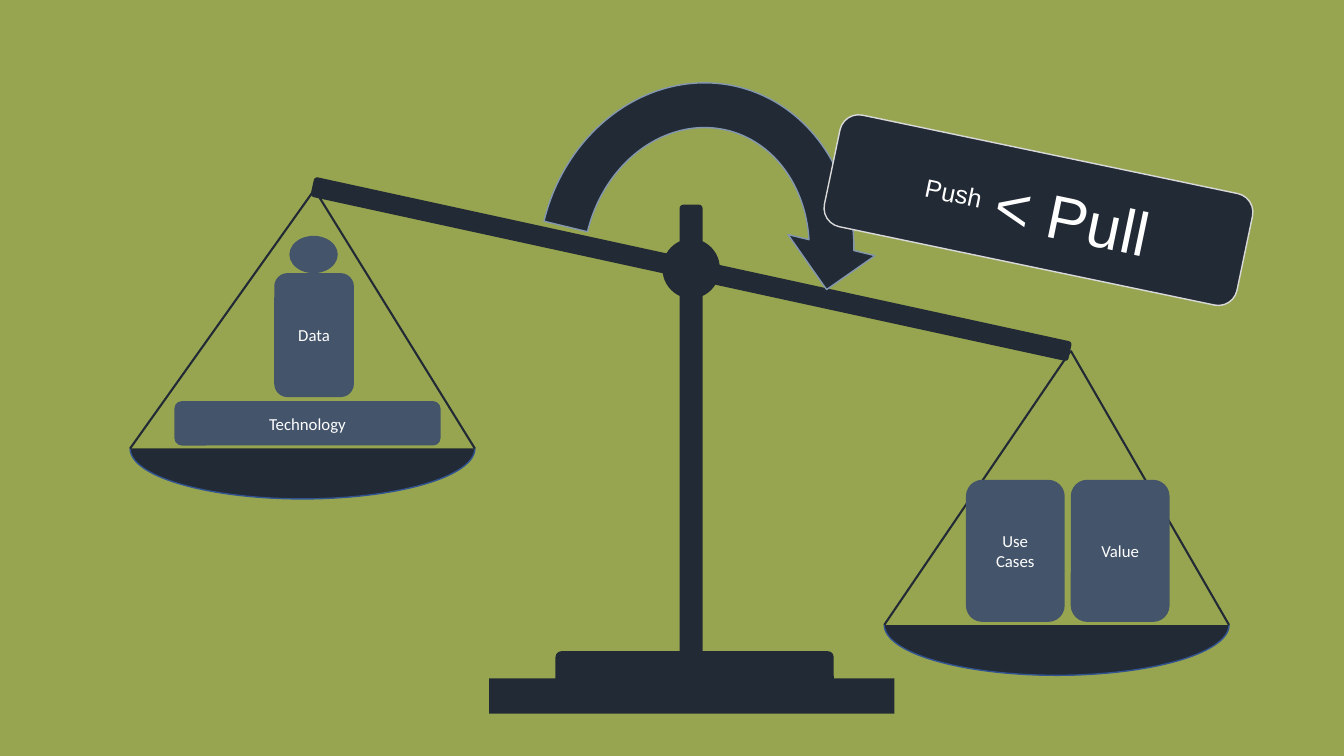
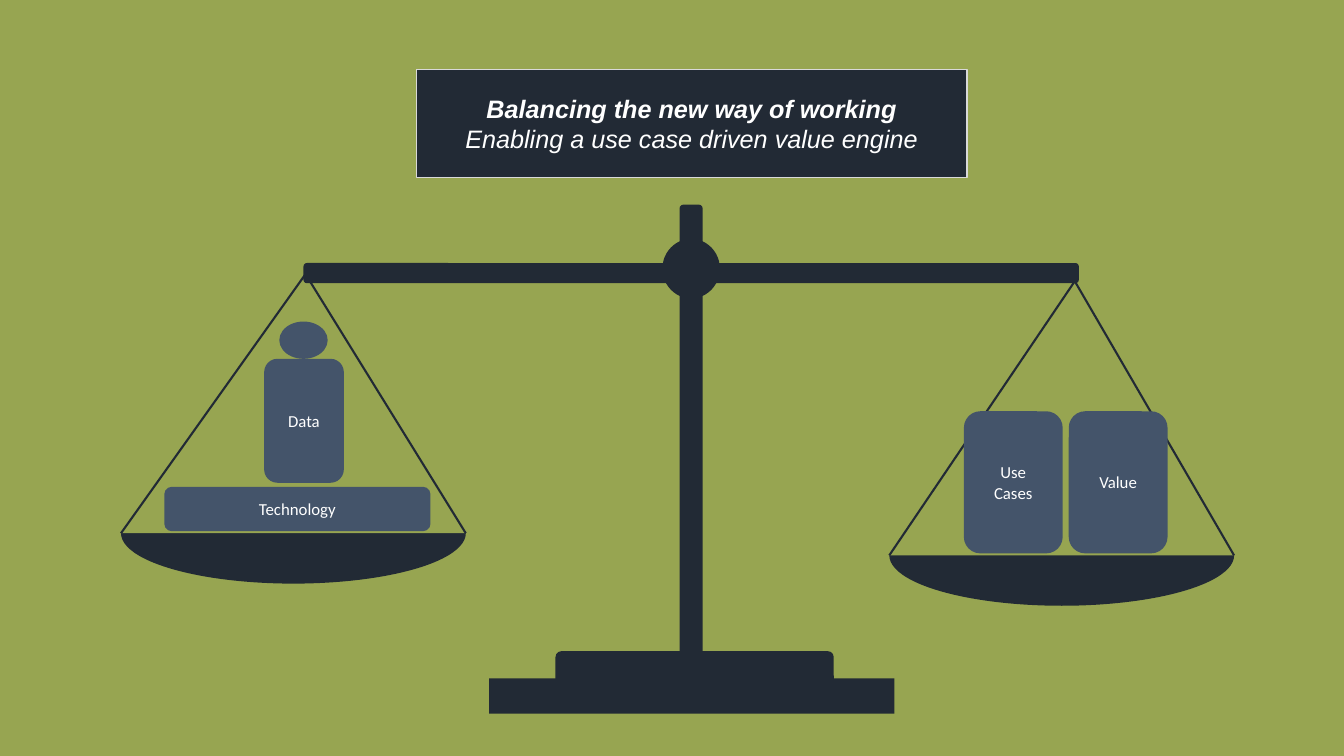
from lxml import etree
from pptx import Presentation
from pptx.dml.color import RGBColor
from pptx.enum.shapes import MSO_CONNECTOR, MSO_SHAPE
from pptx.enum.text import MSO_ANCHOR, MSO_AUTO_SIZE, PP_ALIGN
from pptx.oxml.ns import qn
from pptx.util import Inches, Pt

RECTANGLE = MSO_SHAPE.RECTANGLE
ROUNDED = MSO_SHAPE.ROUNDED_RECTANGLE
OVAL = MSO_SHAPE.OVAL
CURVED_ARROW = MSO_SHAPE.CIRCULAR_ARROW
STRAIGHT = MSO_CONNECTOR.STRAIGHT
CENTER = PP_ALIGN.CENTER
MIDDLE = MSO_ANCHOR.MIDDLE
TOP = MSO_ANCHOR.TOP
NO_AUTOFIT = MSO_AUTO_SIZE.NONE

COLORS = {
    "background": "97A551",
    "scale": "222A35",
    "weight": "44546A",
    "pan_edge": "325491",
    "arrow_edge": "8497B0",
    "panel_edge": "D9D9D9",
    "text": "FFFFFF",
}
TITLE_ONLY, BLANK = 5, 6
PAN_WIDTH, PAN_HEIGHT = 3.42, 1
MASK_OVERHANG, MASK_WIDTH, MASK_HEIGHT = 0.42, 4.65, 0.66
BLOCK_WIDTH, BLOCK_HEIGHT, BLOCK_GAP = 0.98, 1.41, 0.06


def rgb(name):
    return RGBColor.from_string(COLORS[name])


def paint(shape, fill, edge=None):
    shape.fill.solid()
    shape.fill.fore_color.rgb = rgb(fill)
    if edge:
        shape.line.color.rgb = rgb(edge)
        shape.line.width = Pt(1)
    else:
        shape.line.fill.background()


def draw_shape(shapes, kind, left, top, width, height, fill, edge=None, rotation=0):
    shape = shapes.add_shape(kind, Inches(left), Inches(top), Inches(width), Inches(height))
    shape.shadow.inherit = False
    shape.rotation = rotation
    paint(shape, fill, edge)
    return shape


def draw_string(shapes, start, end):
    connector = shapes.add_connector(STRAIGHT, *(Inches(value) for value in start + end))
    connector.line.color.rgb = rgb("scale")
    connector.line.width = Pt(1.5)
    etree.SubElement(connector._element.spPr, qn("a:effectLst"))


def write_text(shape, lines, size=12, font="Calibri", bold=(False,), italic=False,
               anchor=MIDDLE, insets=(0.1, 0.05, 0.1, 0.05)):
    frame = shape.text_frame
    frame.word_wrap = True
    frame.auto_size = NO_AUTOFIT
    frame.vertical_anchor = anchor
    frame.margin_left, frame.margin_top, frame.margin_right, frame.margin_bottom = map(Inches, insets)
    for index, line in enumerate(lines):
        paragraph = frame.add_paragraph() if index else frame.paragraphs[0]
        paragraph.alignment = CENTER
        paragraph.line_spacing = 1
        run = paragraph.add_run()
        run.text = line
        run.font.name = font
        run.font.size = Pt(size)
        run.font.bold = bold[index % len(bold)]
        run.font.italic = italic
        run.font.color.rgb = rgb("text")


def draw_pan(slide, left, rim, apex, edge=None):
    shapes = slide.shapes.add_group_shape().shapes
    draw_shape(shapes, OVAL, left, rim - PAN_HEIGHT / 2, PAN_WIDTH, PAN_HEIGHT, "scale", edge)
    draw_shape(shapes, RECTANGLE, left - MASK_OVERHANG, rim - MASK_HEIGHT,
               MASK_WIDTH, MASK_HEIGHT, "background")
    for end in (left, left + PAN_WIDTH):
        draw_string(shapes, apex, (end, rim))


def draw_stand(slide, beam_top, beam_rotation=0):
    shapes = slide.shapes
    draw_shape(shapes, RECTANGLE, 4.85, 6.73, 4.02, 0.35, "scale")
    draw_shape(shapes, ROUNDED, 5.51, 6.46, 2.76, 0.35, "scale")
    draw_shape(shapes, ROUNDED, 6.74, 2.03, 0.23, 4.58, "scale")
    draw_shape(shapes, ROUNDED, 3.01, beam_top, 7.69, 0.2, "scale", rotation=beam_rotation)
    draw_shape(shapes, OVAL, 6.57, 2.37, 0.57, 0.59, "scale")


def draw_push_load(slide, left, top):
    technology = draw_shape(slide.shapes, ROUNDED, left, top + 1.64, 2.64, 0.44, "weight")
    write_text(technology, ["Technology"])
    shapes = slide.shapes.add_group_shape().shapes
    data = draw_shape(shapes, ROUNDED, left + 0.99, top + 0.37, 0.79, 1.23, "weight")
    write_text(data, ["Data"])
    draw_shape(shapes, OVAL, left + 1.14, top, 0.48, 0.37, "weight")


def draw_pull_load(slide, left, top):
    for index, lines in enumerate((["Use", "Cases"], ["Value"])):
        block = draw_shape(slide.shapes, ROUNDED, left + index * (BLOCK_WIDTH + BLOCK_GAP), top,
                           BLOCK_WIDTH, BLOCK_HEIGHT, "weight")
        write_text(block, lines)


def draw_push_pull_panel(slide, left, top, rotation):
    shapes = slide.shapes.add_group_shape().shapes
    panel = draw_shape(shapes, ROUNDED, left, top, 4.18, 1.13, "scale", "panel_edge", rotation)
    write_text(panel, ["< Pull"], size=44, font="Arial", insets=(0.8, 0.05, 0.1, 0.05))
    push = shapes.add_textbox(Inches(left + 0.88), Inches(top + 0.24), Inches(0.72), Inches(0.4))
    push.rotation = rotation
    write_text(push, ["Push"], size=18, font="Arial", anchor=TOP, insets=(0, 0, 0, 0))


def draw_title_panel(slide, left, top, width, height):
    title = slide.shapes.title
    title.left, title.top, title.width, title.height = map(Inches, (left, top, width, height))
    geometry = etree.SubElement(title._element.spPr, qn("a:prstGeom"), prst="roundRect")
    etree.SubElement(geometry, qn("a:avLst"))
    paint(title, "scale", "panel_edge")
    write_text(title, ["Balancing the new way of working", "Enabling a use case driven value engine"],
               size=18, font="Arial", bold=(True, False), italic=True)


def build_tilted_slide(presentation):
    slide = presentation.slides.add_slide(presentation.slide_layouts[BLANK])
    draw_pan(slide, 1.29, 4.45, (3.12, 1.88), "pan_edge")
    draw_stand(slide, 2.57, 12.3)
    draw_pan(slide, 8.77, 6.2, (10.62, 3.48), "pan_edge")
    draw_shape(slide.shapes, CURVED_ARROW, 5.13, 0.59, 3.55, 3.94, "scale", "arrow_edge", 13.6)
    draw_push_load(slide, 1.73, 2.34)
    draw_pull_load(slide, 9.58, 4.76)
    draw_push_pull_panel(slide, 8.21, 1.52, 11.8)


def build_balanced_slide(presentation):
    slide = presentation.slides.add_slide(presentation.slide_layouts[TITLE_ONLY])
    draw_pan(slide, 1.2, 5.29, (3.03, 2.72))
    draw_stand(slide, 2.61)
    draw_pan(slide, 8.82, 5.51, (10.66, 2.79))
    draw_push_load(slide, 1.63, 3.19)
    draw_pull_load(slide, 9.56, 4.08)
    draw_title_panel(slide, 4.13, 0.69, 5.46, 1.07)


def main():
    presentation = Presentation()
    presentation.slide_width = Inches(13.33)
    presentation.slide_height = Inches(7.5)
    background = presentation.slide_master.background.fill
    background.solid()
    background.fore_color.rgb = rgb("background")
    build_tilted_slide(presentation)
    build_balanced_slide(presentation)
    presentation.save("out.pptx")


if __name__ == "__main__":
    main()
